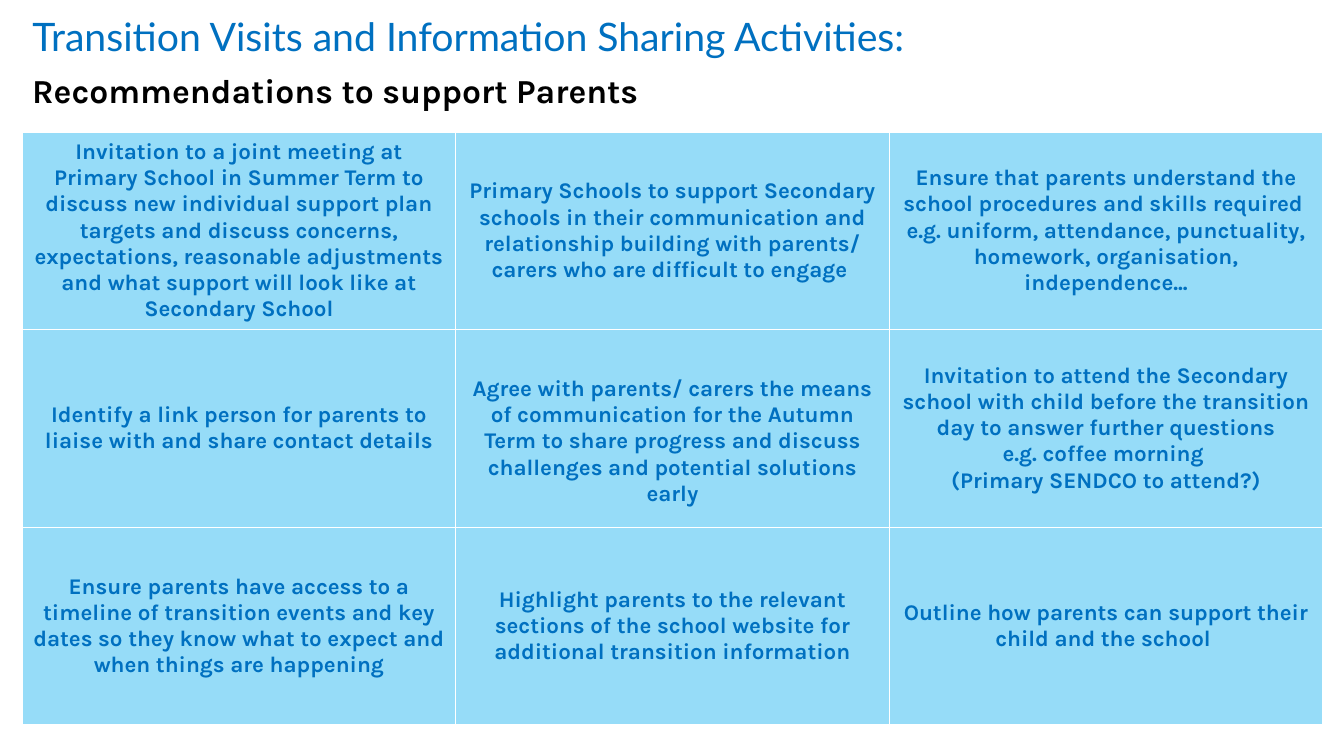
from pptx import Presentation
from pptx.dml.color import RGBColor
from pptx.enum.text import MSO_ANCHOR, MSO_AUTO_SIZE, PP_ALIGN
from pptx.util import Inches, Pt

TITLE = "Transition Visits and Information Sharing Activities:"
SUBTITLE = "Recommendations to support Parents"
RECOMMENDATIONS = [
    [
        "Invitation to a joint meeting at Primary School in Summer Term to discuss new individual "
        "support plan targets and discuss concerns, expectations, reasonable "
        "adjustments and what support will look like at Secondary School",
        "Primary Schools to support Secondary schools in their communication and "
        "relationship building with parents/ carers who are difficult to engage ",
        "Ensure that parents understand the school procedures and skills required "
        " e.g. uniform, attendance, punctuality, homework, organisation, independence...",
    ],
    [
        "Identify a link person for parents to liaise with and share contact details",
        "Agree with parents/ carers the means of communication for the Autumn "
        "Term to share progress and discuss challenges and potential solutions early",
        "Invitation to attend the Secondary school with child before the transition "
        "day to answer further questions\n"
        "e.g. coffee morning \n"
        "(Primary SENDCO to attend?)",
    ],
    [
        "Ensure parents have access to a timeline of transition events and key "
        "dates so they know what to expect and when things are happening",
        "Highlight parents to the relevant sections of the school website for "
        "additional transition information",
        "Outline how parents can support their child and the school ",
    ],
]
LOWERED_CELL = (1, 1)
BLUE, PALE_BLUE, BLACK = "0070C0", "96DCF8", "000000"
LEFT = 0.22
COLUMN_WIDTH, ROW_HEIGHT = 4.3, 1.96


def color(hex_value):
    return RGBColor.from_string(hex_value)


def style(paragraph, font_name, size, hex_value, bold, align):
    paragraph.alignment = align
    font = paragraph.font
    font.name, font.size, font.bold = font_name, Pt(size), bold
    font.color.rgb = color(hex_value)


def fill_heading(heading, text, font_name, size, hex_value, bold):
    frame = heading.text_frame
    frame.word_wrap = True
    frame.auto_size = MSO_AUTO_SIZE.NONE
    frame.vertical_anchor = MSO_ANCHOR.TOP
    frame.text = text
    style(frame.paragraphs[0], font_name, size, hex_value, bold, PP_ALIGN.LEFT)


prs = Presentation()
prs.slide_width, prs.slide_height = Inches(13.33), Inches(7.5)
slide = prs.slides.add_slide(prs.slide_layouts[5])

title = slide.shapes.title
title.left, title.top = Inches(LEFT), Inches(0.07)
title.width, title.height = Inches(12.88), Inches(0.57)
fill_heading(title, TITLE, "Lato", 28, BLUE, False)

subtitle = slide.shapes.add_textbox(Inches(LEFT), Inches(0.64), Inches(7.25), Inches(0.5))
fill_heading(subtitle, SUBTITLE, "Karla", 24, BLACK, True)

row_count, column_count = len(RECOMMENDATIONS), len(RECOMMENDATIONS[0])
table = slide.shapes.add_table(
    row_count, column_count, Inches(LEFT), Inches(1.31),
    Inches(COLUMN_WIDTH * column_count), Inches(ROW_HEIGHT * row_count),
).table
table.horz_banding = False

for row, recommendations in enumerate(RECOMMENDATIONS):
    for column, recommendation in enumerate(recommendations):
        cell = table.cell(row, column)
        cell.fill.solid()
        cell.fill.fore_color.rgb = color(PALE_BLUE)
        cell.vertical_anchor = MSO_ANCHOR.MIDDLE
        if (row, column) == LOWERED_CELL:
            cell.margin_top = Inches(0.31)
        cell.text = recommendation
        for paragraph in cell.text_frame.paragraphs:
            style(paragraph, "Karla", 16, BLUE, True, PP_ALIGN.CENTER)

prs.save("out.pptx")
